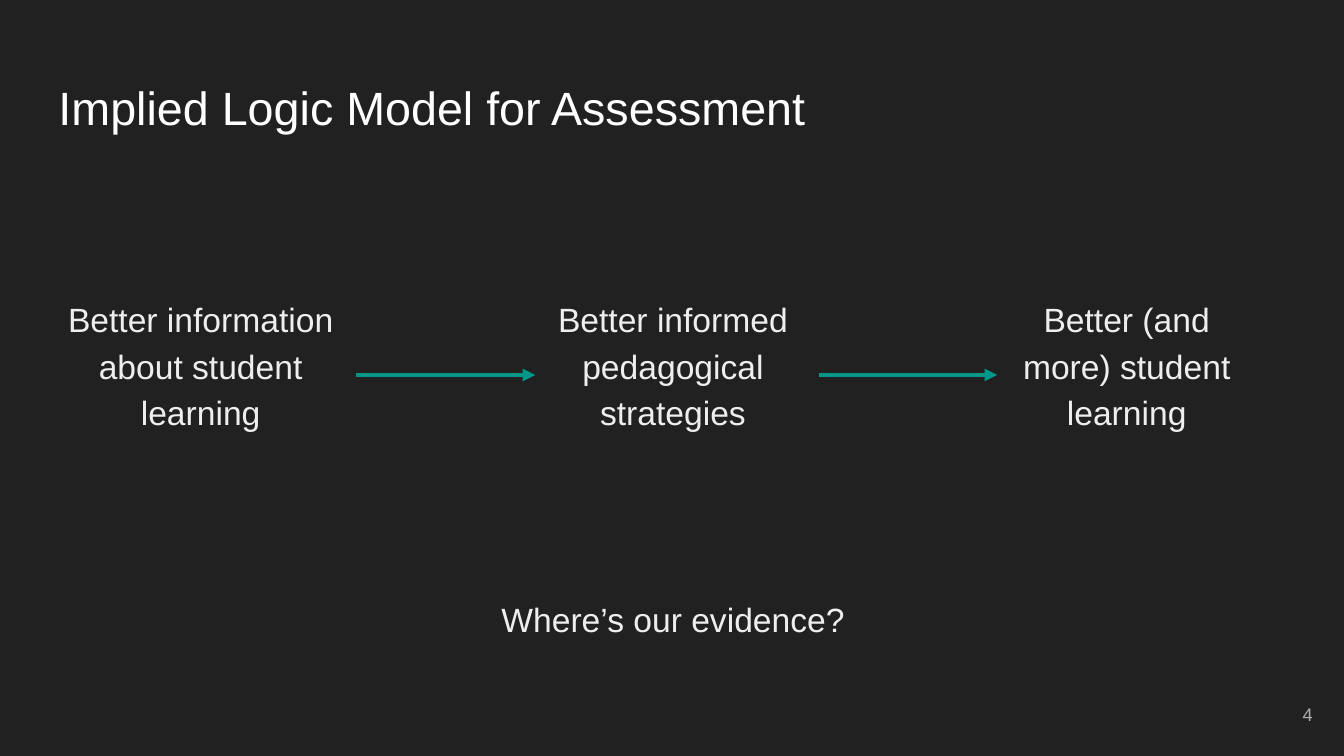
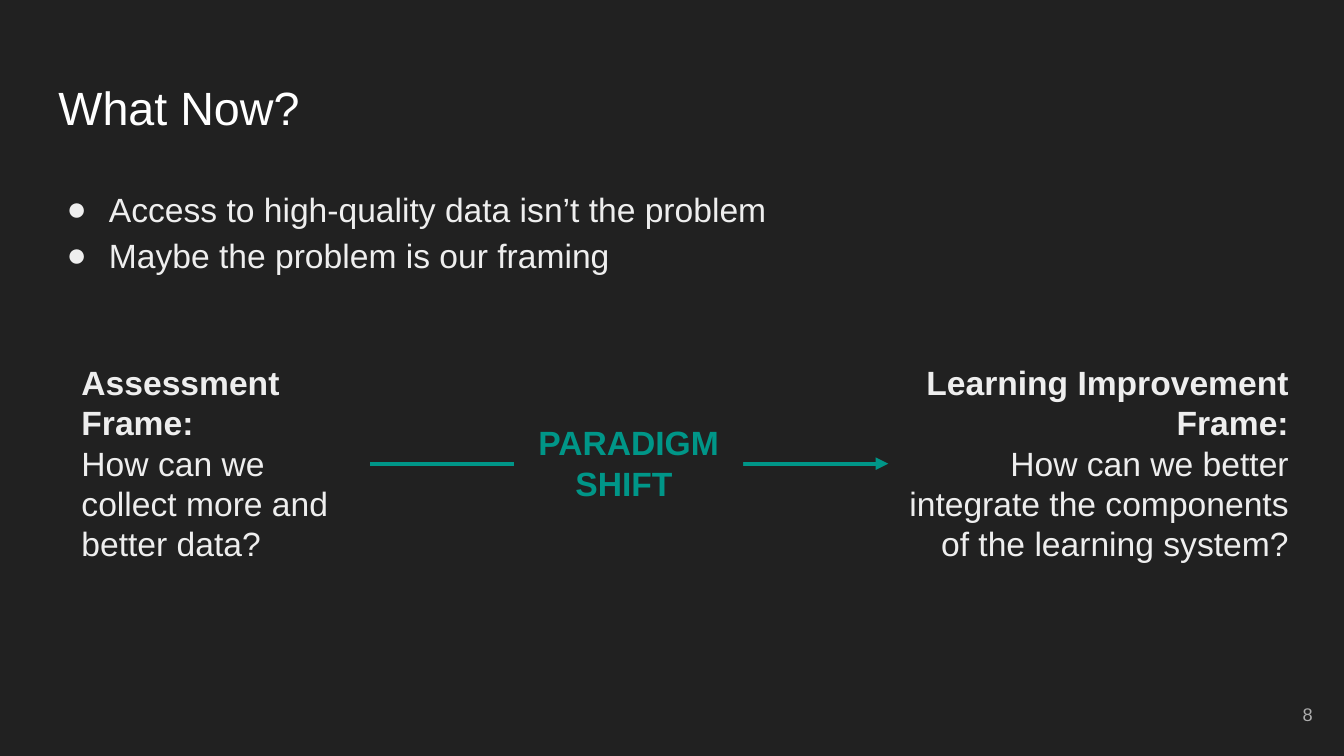
from lxml.etree import SubElement
from pptx import Presentation
from pptx.dml.color import RGBColor
from pptx.enum.shapes import MSO_CONNECTOR, MSO_SHAPE
from pptx.enum.text import MSO_ANCHOR, MSO_AUTO_SIZE, PP_ALIGN
from pptx.oxml.ns import qn
from pptx.util import Inches, Pt

FONT = "Arial"
BACKGROUND = "212121"
TITLE_COLOR = "FFFFFF"
BODY_COLOR = "EEEEEE"
NUMBER_COLOR = "ADADAD"
ACCENT = "009688"
BODY_SIZE = 24
BODY_SPACING = 1.15
PLACEHOLDER_INSET = 0.13
FRAME_INSET = 0.1
LEFT, RIGHT, RIGHT_SIDE, LEFT_SIDE = PP_ALIGN.LEFT, PP_ALIGN.RIGHT, 3, 1


def set_color(color_format, hex_color):
    color_format.rgb = RGBColor.from_string(hex_color)


def set_fill(fill, hex_color):
    fill.solid()
    set_color(fill.fore_color, hex_color)


def format_frame(frame, inset, anchor=MSO_ANCHOR.TOP):
    frame.word_wrap = True
    frame.auto_size = MSO_AUTO_SIZE.NONE
    frame.vertical_anchor = anchor
    frame.margin_left = frame.margin_right = Inches(inset)
    frame.margin_top = frame.margin_bottom = Inches(inset)


def add_run(paragraph, text, size=BODY_SIZE, color=BODY_COLOR, bold=False):
    run = paragraph.add_run()
    run.text = text
    run.font.name = FONT
    run.font.size = Pt(size)
    run.font.bold = bold
    set_color(run.font.color, color)


def add_text_box(slide, box, inset=PLACEHOLDER_INSET, anchor=MSO_ANCHOR.TOP):
    shape = slide.shapes.add_textbox(*map(Inches, box))
    format_frame(shape.text_frame, inset, anchor)
    return shape


def add_body_text(slide, box, text):
    shape = add_text_box(slide, box)
    paragraph = shape.text_frame.paragraphs[0]
    paragraph.alignment = PP_ALIGN.CENTER
    paragraph.line_spacing = BODY_SPACING
    add_run(paragraph, text)
    return shape


def add_bullets(slide, box, items):
    frame = add_text_box(slide, box).text_frame
    for index, item in enumerate(items):
        paragraph = frame.add_paragraph() if index else frame.paragraphs[0]
        paragraph.line_spacing = BODY_SPACING
        properties = paragraph._p.get_or_add_pPr()
        properties.set("marL", str(Inches(0.5)))
        properties.set("indent", str(Inches(-0.42)))
        bullet_color = SubElement(properties, qn("a:buClr"))
        SubElement(bullet_color, qn("a:srgbClr")).set("val", BODY_COLOR)
        SubElement(properties, qn("a:buFont")).set("typeface", FONT)
        SubElement(properties, qn("a:buChar")).set("char", "●")
        add_run(paragraph, item)


def add_question_frame(slide, box, heading, question, alignment):
    shape = add_text_box(slide, box, FRAME_INSET)
    frame = shape.text_frame
    for paragraph, text, bold in (
        (frame.paragraphs[0], heading, True),
        (frame.add_paragraph(), question, False),
    ):
        paragraph.alignment = alignment
        add_run(paragraph, text, bold=bold)
    return shape


def add_label(slide, box, text):
    shape = slide.shapes.add_shape(MSO_SHAPE.RECTANGLE, *map(Inches, box))
    shape.shadow.inherit = False
    set_fill(shape.fill, BACKGROUND)
    shape.line.fill.background()
    format_frame(shape.text_frame, FRAME_INSET)
    paragraph = shape.text_frame.paragraphs[0]
    paragraph.alignment = PP_ALIGN.CENTER
    add_run(paragraph, text, color=ACCENT, bold=True)


def add_arrow(slide, start_x, end_x, y):
    connector = slide.shapes.add_connector(
        MSO_CONNECTOR.STRAIGHT, Inches(start_x), Inches(y), Inches(end_x), Inches(y)
    )
    set_fill(connector.line.fill, ACCENT)
    connector.line.width = Pt(3)
    SubElement(connector.line._get_or_add_ln(), qn("a:tailEnd")).set("type", "triangle")
    SubElement(connector._element.spPr, qn("a:effectLst"))
    return connector


def join(connector, source, target):
    connector.begin_connect(source, RIGHT_SIDE)
    connector.end_connect(target, LEFT_SIDE)


def add_slide(presentation, title, number):
    slide = presentation.slides.add_slide(presentation.slide_layouts.get_by_name("Title Only"))
    shape = slide.shapes.title
    shape.left, shape.top, shape.width, shape.height = map(Inches, (0.45, 0.65, 12.42, 0.83))
    format_frame(shape.text_frame, PLACEHOLDER_INSET)
    paragraph = shape.text_frame.paragraphs[0]
    paragraph.alignment = LEFT
    add_run(paragraph, title, 33.3, TITLE_COLOR)

    number_box = add_text_box(slide, (12.35, 6.8, 0.8, 0.57), anchor=MSO_ANCHOR.MIDDLE)
    paragraph = number_box.text_frame.paragraphs[0]
    paragraph.alignment = RIGHT
    add_run(paragraph, number, 13, NUMBER_COLOR)
    return slide


def build_logic_model(presentation):
    slide = add_slide(presentation, "Implied Logic Model for Assessment", "4")
    steps = (
        (0.45, 3.08, "Better information about student learning"),
        (5.31, 2.73, "Better informed pedagogical strategies"),
        (9.81, 2.73, "Better (and more) student learning"),
    )
    information, strategies, _ = [
        add_body_text(slide, (left, 2.78, width, 1.88), text) for left, width, text in steps
    ]
    join(add_arrow(slide, 3.53, 5.31, 3.72), information, strategies)
    add_arrow(slide, 8.12, 9.89, 3.72)
    add_body_text(slide, (4.18, 5.75, 4.99, 1.05), "Where’s our evidence?")


def build_paradigm_shift(presentation):
    slide = add_slide(presentation, "What Now?", "8")
    add_bullets(
        slide,
        (0.45, 1.68, 12.42, 4.98),
        ("Access to high-quality data isn’t the problem", "Maybe the problem is our framing"),
    )
    assessment = add_question_frame(
        slide,
        (0.71, 3.49, 2.96, 2.22),
        "Assessment Frame:",
        "How can we collect more and better data?",
        LEFT,
    )
    improvement = add_question_frame(
        slide,
        (8.81, 3.49, 4.07, 2.22),
        "Learning Improvement Frame:",
        "How can we better integrate the components of the learning system?",
        RIGHT,
    )
    join(add_arrow(slide, 3.67, 8.81, 4.6), assessment, improvement)
    add_label(slide, (5.1, 4.09, 2.27, 1.01), "PARADIGM SHIFT ")


def main():
    presentation = Presentation()
    presentation.slide_width = Inches(13.33)
    presentation.slide_height = Inches(7.5)
    set_fill(presentation.slide_master.background.fill, BACKGROUND)
    build_logic_model(presentation)
    build_paradigm_shift(presentation)
    presentation.save("out.pptx")


if __name__ == "__main__":
    main()
